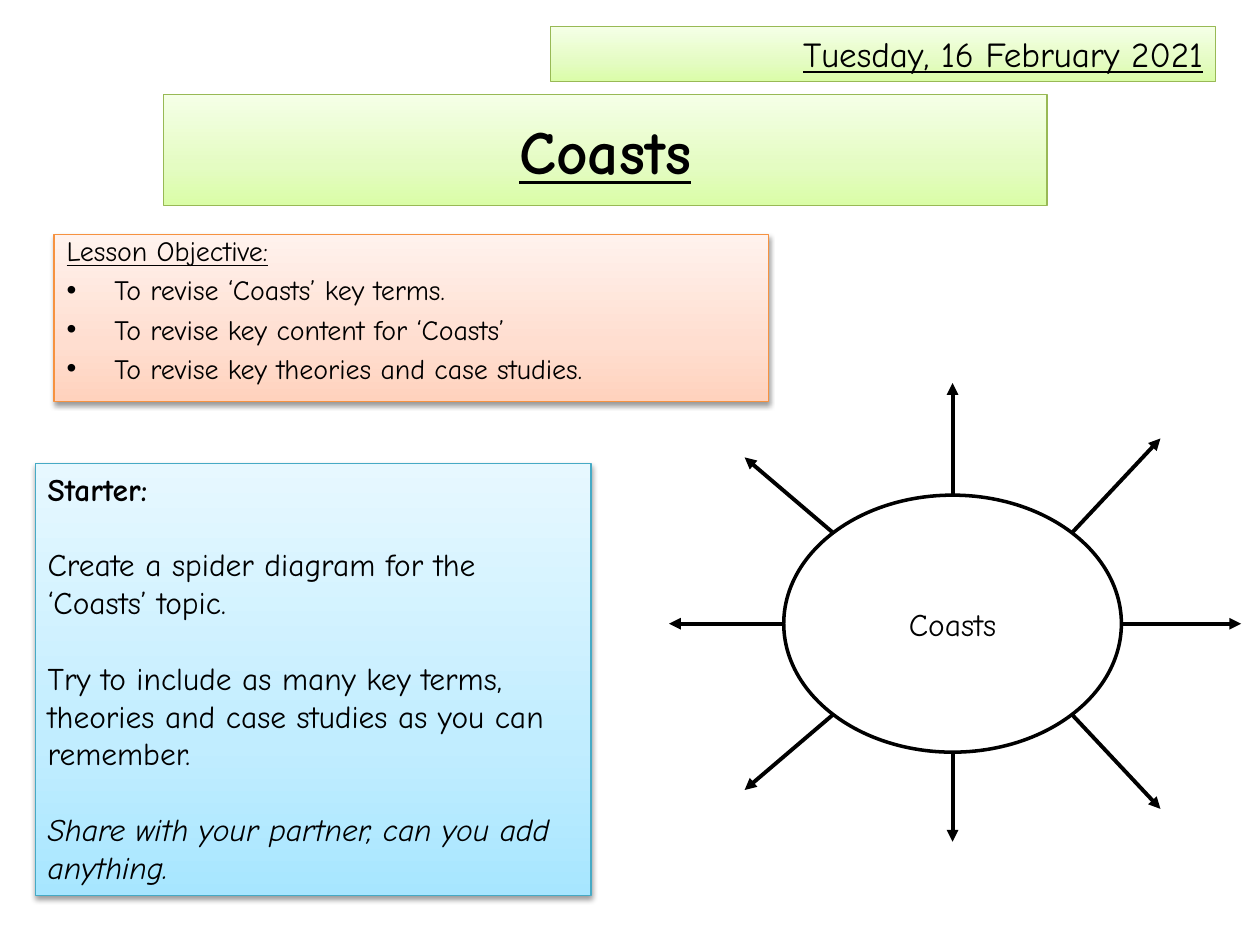
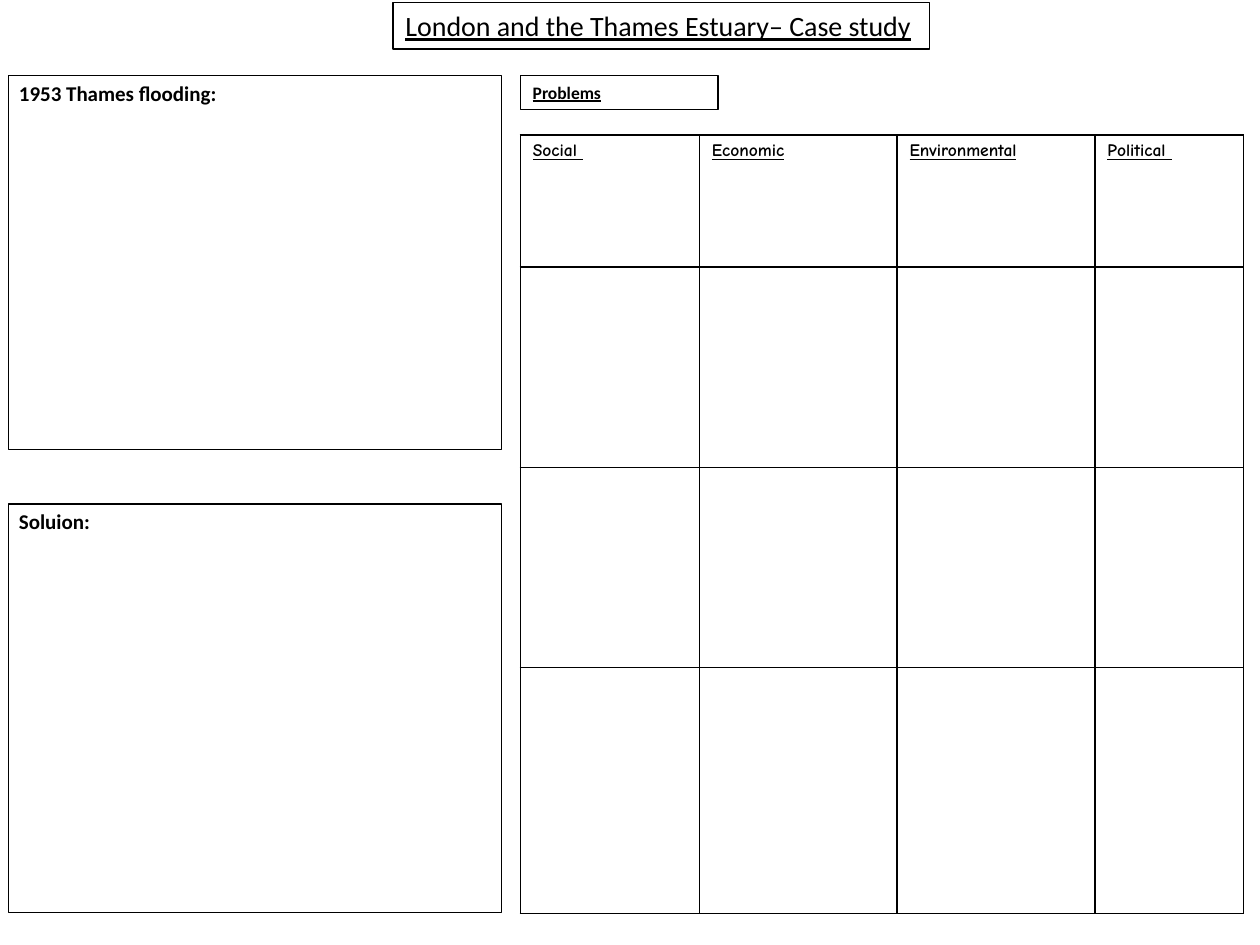
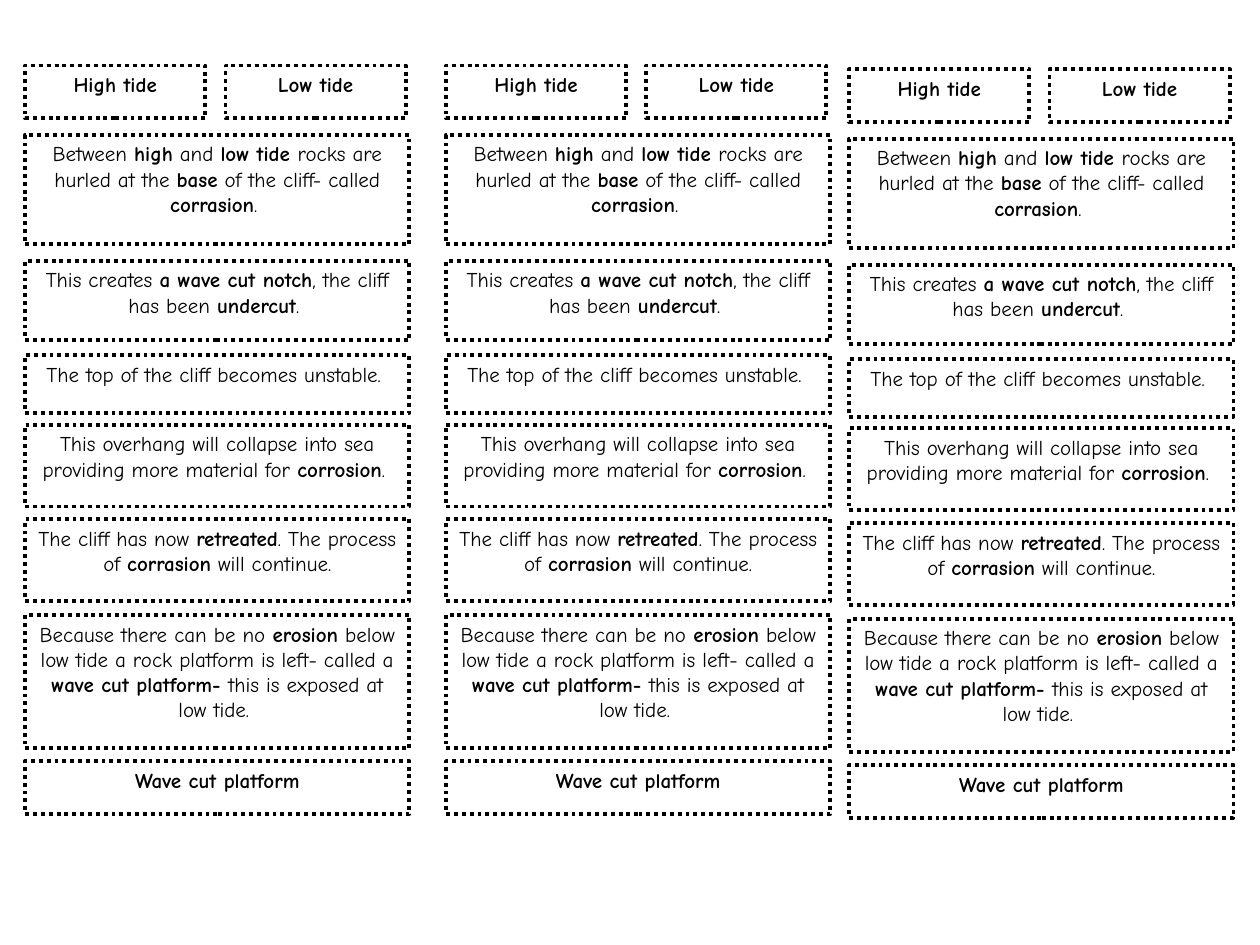
from copy import deepcopy
from math import cos, radians, sin

from lxml import etree
from pptx import Presentation
from pptx.dml.color import RGBColor
from pptx.enum import dml, shapes, text
from pptx.oxml.ns import qn
from pptx.util import Inches, Pt

COLOURS = {
    "ink": "000000", "paper": "FFFFFF",
    "green edge": "98B955", "orange edge": "F69240", "blue edge": "46AAC5",
}
GRADIENTS = {
    "green": ("DAFDA7", "E4FCC2", "F5FFE7"),
    "orange": ("FFD2BD", "FFDED0", "FFF2ED"),
    "blue": ("A7E6FF", "C1EDFF", "E7F8FF"),
}
GRADIENT_POSITIONS = (0, 0.35, 1)
HAND, PLAIN = "Comic Neue", "Calibri"
LEFT, CENTRE, RIGHT = text.PP_ALIGN.LEFT, text.PP_ALIGN.CENTER, text.PP_ALIGN.RIGHT

DATE = "Tuesday, 16 February 2021"
TOPIC = "Coasts"
OBJECTIVE_HEADING = "Lesson Objective:"
OBJECTIVES = [
    "To revise ‘Coasts’ key terms.",
    "To revise key content for ‘Coasts’",
    "To revise key theories and case studies.",
]
STARTER = [
    ("Starter:", {"bold": True}),
    ("Create a spider diagram for the ‘Coasts’ topic.", {}),
    ("Try to include as many key terms, theories and case studies as you can remember.", {}),
    ("Share with your partner, can you add anything.", {"italic": True}),
]
HUB_CENTRE, HUB_RADII = (7.56, 4.95), (1.34, 1.02)
ARROW_TIPS = [
    (0, (9.85, 4.95)), (45, (9.21, 6.42)), (90, (7.56, 6.68)), (135, (5.91, 6.27)),
    (180, (5.31, 4.95)), (225, (5.91, 3.63)), (270, (7.56, 3.04)), (315, (9.21, 3.48)),
]

CASE_STUDY = "London and the Thames Estuary– Case study"
NOTE_BOXES = [
    ("1953 Thames flooding:", 0.6, 2.97),
    ("Soluion:", 4, 3.24),
]
PROBLEMS = "Problems"
PROBLEM_KINDS = [("Social ", 1.42), ("Economic", 1.57), ("Environmental", 1.57), ("Political ", 1.18)]
PROBLEM_ROWS = [1.05, 1.59, 1.59, 1.95]

STRIP_ORIGINS = [(0.2, 0.52), (3.54, 0.52), (6.74, 0.55)]
STRIP_WIDTH, TIDE_WIDTH = 3.05, 1.43
CARDS = [
    (0, 0, TIDE_WIDTH, 0.42, "*High tide*"),
    (1.59, 0, TIDE_WIDTH, 0.42, "*Low tide*"),
    (0, 0.55, STRIP_WIDTH, 0.87,
     "Between *high* and *low tide *rocks are hurled at the *base* of the cliff- called *corrasion*. "),
    (0, 1.55, STRIP_WIDTH, 0.63,
     "This creates *a wave cut notch*, the cliff has been *undercut*. "),
    (0, 2.3, STRIP_WIDTH, 0.46, "The top of the cliff becomes unstable. "),
    (0, 2.85, STRIP_WIDTH, 0.65,
     "This overhang will collapse into sea providing more material for *corrosion*. "),
    (0, 3.6, STRIP_WIDTH, 0.65,
     "The cliff has now *retreated*. The process of *corrasion* will continue."),
    (0, 4.36, STRIP_WIDTH, 1.06,
     "Because there can be no *erosion* below low tide a rock platform is left- called a "
     "*wave cut platform- *this is exposed at low tide. "),
    (0, 5.52, STRIP_WIDTH, 0.42, "*Wave cut platform*"),
]


def colour(name):
    return RGBColor.from_string(COLOURS[name])


def add_panel(slide, at, edge="ink", weight=0.75, kind=shapes.MSO_SHAPE.RECTANGLE,
              anchor=text.MSO_ANCHOR.TOP, insets=(0.1, 0.05)):
    panel = slide.shapes.add_shape(kind, *map(Inches, at))
    panel.shadow.inherit = False
    panel.fill.background()
    panel.line.color.rgb = colour(edge)
    panel.line.width = Pt(weight)
    frame = panel.text_frame
    frame.word_wrap = True
    frame.vertical_anchor = anchor
    frame.margin_left = frame.margin_right = Inches(insets[0])
    frame.margin_top = frame.margin_bottom = Inches(insets[1])
    return panel


def add_gradient(panel, name):
    panel.fill.gradient()
    panel.fill.gradient_angle = 90
    stop_list = panel._element.spPr.find(qn("a:gradFill")).find(qn("a:gsLst"))
    stop_list.append(deepcopy(stop_list[0]))
    for stop, position, shade in zip(panel.fill.gradient_stops, GRADIENT_POSITIONS, GRADIENTS[name]):
        stop.position = position
        stop.color.rgb = RGBColor.from_string(shade)


def add_shadow(panel):
    effects = panel._element.spPr.find(qn("a:effectLst"))
    shadow = etree.SubElement(effects, qn("a:outerShdw"), blurRad="40000", dist="20000",
                              dir="5400000", rotWithShape="0")
    shade = etree.SubElement(shadow, qn("a:srgbClr"), val=COLOURS["ink"])
    etree.SubElement(shade, qn("a:alpha"), val="38000")


def add_run(paragraph, words, size, face=HAND, **style):
    run = paragraph.add_run()
    run.text = words
    run.font.name = face
    run.font.size = Pt(size)
    run.font.color.rgb = colour("ink")
    for key, value in style.items():
        setattr(run.font, key, value)


def write(frame, words, size, face=HAND, align=LEFT, first=True, **style):
    paragraph = frame.paragraphs[0] if first else frame.add_paragraph()
    paragraph.alignment = align
    add_run(paragraph, words, size, face, **style)
    return paragraph


def add_bullet(paragraph, indent):
    properties = paragraph._p.get_or_add_pPr()
    properties.set("marL", str(Inches(indent)))
    properties.set("indent", str(-Inches(indent)))
    etree.SubElement(properties, qn("a:buFont"), typeface="Arial")
    etree.SubElement(properties, qn("a:buChar"), char="•")


def add_arrow(slide, start, tip):
    arrow = slide.shapes.add_connector(shapes.MSO_CONNECTOR.STRAIGHT, *map(Inches, (*start, *tip)))
    arrow.line.color.rgb = colour("ink")
    arrow.line.width = Pt(2.25)
    properties = arrow._element.spPr
    etree.SubElement(properties.find(qn("a:ln")), qn("a:tailEnd"), type="triangle")
    etree.SubElement(properties, qn("a:effectLst"))


def add_borders(cell):
    properties = cell._tc.get_or_add_tcPr()
    for position, side in enumerate(("lnL", "lnR", "lnT", "lnB")):
        border = etree.Element(qn("a:" + side), w=str(Pt(1)))
        fill = etree.SubElement(border, qn("a:solidFill"))
        etree.SubElement(fill, qn("a:srgbClr"), val=COLOURS["ink"])
        properties.insert(position, border)


def build_starter(slide):
    starter = add_panel(slide, (0.28, 3.68, 4.41, 3.43), "blue edge")
    add_gradient(starter, "blue")
    add_shadow(starter)
    for index, (words, style) in enumerate(STARTER):
        paragraph = write(starter.text_frame, words, 18, first=index == 0, **style)
        if index:
            paragraph.space_before = Pt(21.6)

    topic = add_panel(slide, (1.3, 0.75, 7.01, 0.88), "green edge", anchor=text.MSO_ANCHOR.MIDDLE)
    add_gradient(topic, "green")
    write(topic.text_frame, TOPIC, 35, align=CENTRE, bold=True, underline=True)

    objective = add_panel(slide, (0.43, 1.86, 5.67, 1.33), "orange edge")
    add_gradient(objective, "orange")
    add_shadow(objective)
    heading = write(objective.text_frame, OBJECTIVE_HEADING, 16, underline=True)
    heading.line_spacing = 0.8
    for words in OBJECTIVES:
        paragraph = write(objective.text_frame, words, 16, first=False)
        paragraph.space_before = Pt(3.2)
        add_bullet(paragraph, 0.38)

    date = add_panel(slide, (4.37, 0.21, 5.28, 0.44), "green edge")
    add_gradient(date, "green")
    write(date.text_frame, DATE, 20, align=RIGHT, underline=True)

    (x, y), (rx, ry) = HUB_CENTRE, HUB_RADII
    hub = add_panel(slide, (x - rx, y - ry, 2 * rx, 2 * ry), weight=2,
                    kind=shapes.MSO_SHAPE.OVAL, anchor=text.MSO_ANCHOR.MIDDLE)
    write(hub.text_frame, TOPIC, 18, align=CENTRE)
    for angle, tip in ARROW_TIPS:
        turn = radians(angle)
        add_arrow(slide, (x + rx * cos(turn), y + ry * sin(turn)), tip)


def build_case_study(slide):
    for words, top, height in NOTE_BOXES:
        note = add_panel(slide, (0.07, top, 3.91, height), insets=(0.08, 0.04))
        write(note.text_frame, words, 12, PLAIN, bold=True)

    title = add_panel(slide, (3.12, 0.02, 4.26, 0.37))
    title.text_frame.word_wrap = False
    write(title.text_frame, CASE_STUDY, 16, PLAIN, underline=True)

    widths = [width for _, width in PROBLEM_KINDS]
    grid = slide.shapes.add_table(
        len(PROBLEM_ROWS), len(widths),
        *map(Inches, (4.13, 1.07, sum(widths), sum(PROBLEM_ROWS)))).table
    for row, height in zip(grid.rows, PROBLEM_ROWS):
        row.height = Inches(height)
    for column, (kind, width) in enumerate(PROBLEM_KINDS):
        grid.columns[column].width = Inches(width)
        write(grid.cell(0, column).text_frame, kind, 10, bold=True, underline=True)
    for cell in grid.iter_cells():
        cell.fill.background()
        add_borders(cell)

    problems = add_panel(slide, (4.13, 0.6, 1.57, 0.27))
    write(problems.text_frame, PROBLEMS, 10, PLAIN, bold=True, underline=True)


def build_card_strips(slide):
    for left, top in STRIP_ORIGINS:
        for across, down, width, height, words in CARDS:
            card = add_panel(slide, (left + across, top + down, width, height), weight=2.25)
            card.fill.solid()
            card.fill.fore_color.rgb = colour("paper")
            card.line.dash_style = dml.MSO_LINE.ROUND_DOT
            paragraph = card.text_frame.paragraphs[0]
            paragraph.alignment = CENTRE
            for index, part in enumerate(words.split("*")):
                if part:
                    add_run(paragraph, part, 12, bold=index % 2 == 1)


def main():
    deck = Presentation()
    deck.slide_width, deck.slide_height = Inches(10), Inches(7.5)
    for build in (build_starter, build_case_study, build_card_strips):
        build(deck.slides.add_slide(deck.slide_layouts[6]))
    deck.save("out.pptx")


if __name__ == "__main__":
    main()
